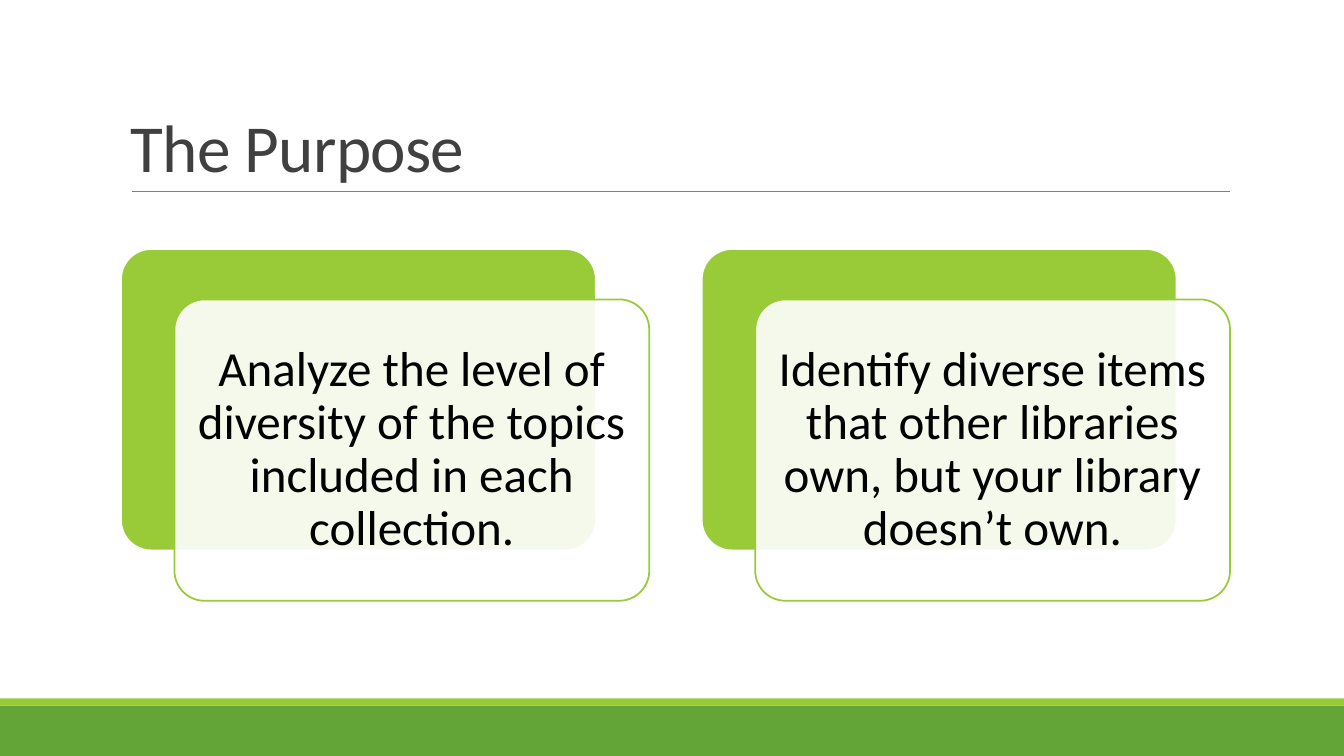
from lxml.etree import SubElement
from pptx import Presentation
from pptx.dml.color import RGBColor as RGB
from pptx.enum.shapes import MSO_CONNECTOR as Connector, MSO_SHAPE as Shape
from pptx.enum.text import MSO_ANCHOR as Anchor, PP_ALIGN as Align
from pptx.oxml.ns import qn
from pptx.util import Inches, Pt

SLIDE_W, SLIDE_H = 13.33, 7.5
LEFT, CONTENT_W = 1.2, 11
CARD_W, CARD_H = 4.71, 2.99
CARD_TOP, CARD_PITCH = 2.47, 5.76
OFFSET_X, OFFSET_Y = 0.53, 0.5
FONT = "Calibri"
COLORS = {
    "band": "63A537",
    "accent": "99CB38",
    "rule": "808080",
    "title": "404040",
    "body": "000000",
    "white": "FFFFFF",
}
PURPOSES = [
    "Analyze the level of diversity of the topics included in each collection.",
    "Identify diverse items that other libraries own, but your library doesn’t own.",
]


def color(name):
    return RGB.from_string(COLORS[name])


def add_block(slide, kind, box, fill, line=None):
    block = slide.shapes.add_shape(kind, *map(Inches, box))
    block.shadow.inherit = False
    block.fill.solid()
    block.fill.fore_color.rgb = color(fill)
    if line:
        block.line.color.rgb = color(line)
        block.line.width = Pt(1.25)
    else:
        block.line.fill.background()
    return block


def add_rounded(slide, left, top, fill, line):
    card = add_block(slide, Shape.ROUNDED_RECTANGLE,
                     (left, top, CARD_W, CARD_H), fill, line)
    card.adjustments[0] = 0.1
    return card


def set_text(frame, text, size, ink, anchor, spacing):
    frame.word_wrap = True
    frame.vertical_anchor = anchor
    frame.text = text
    paragraph = frame.paragraphs[0]
    paragraph.line_spacing = spacing
    font = paragraph.runs[0].font
    font.name, font.size = FONT, Pt(size)
    font.color.rgb = color(ink)
    return paragraph


def add_title(slide, text):
    title = slide.shapes.add_textbox(*map(Inches, (LEFT, 0.31, CONTENT_W, 1.59)))
    paragraph = set_text(title.text_frame, text, 48, "title", Anchor.BOTTOM, 0.85)
    # Slightly tightened letter spacing
    paragraph.runs[0].font._element.set("spc", "-50")


def add_rule(slide, left, right, y):
    rule = slide.shapes.add_connector(
        Connector.STRAIGHT, *map(Inches, (left, y, right, y)))
    rule.line.color.rgb = color("rule")
    rule.line.width = Pt(0.5)
    SubElement(rule._element.spPr, qn("a:effectLst"))


def add_purpose(slide, left, text):
    # Solid card behind, translucent card with the text in front
    add_rounded(slide, left, CARD_TOP, "accent", "white")
    front = add_rounded(slide, left + OFFSET_X, CARD_TOP + OFFSET_Y,
                        "white", "accent")
    white = front._element.spPr.find(qn("a:solidFill"))[0]
    SubElement(white, qn("a:alpha"), val="90000")
    frame = front.text_frame
    frame.margin_left = frame.margin_right = Inches(0.13)
    frame.margin_top = frame.margin_bottom = Inches(0.15)
    paragraph = set_text(frame, text, 35, "body", Anchor.MIDDLE, 0.9)
    paragraph.alignment = Align.CENTER


def main():
    deck = Presentation()
    deck.slide_width, deck.slide_height = Inches(SLIDE_W), Inches(SLIDE_H)
    slide = deck.slides.add_slide(deck.slide_layouts[6])

    # Footer bands
    add_block(slide, Shape.RECTANGLE, (0, 7, SLIDE_W, 0.5), "band")
    add_block(slide, Shape.RECTANGLE, (0, 6.93, SLIDE_W, 0.07), "accent")

    # Heading
    add_rule(slide, 1.31, 12.2, 1.9)
    add_title(slide, "The Purpose")

    # Purposes, side by side
    for column, purpose in enumerate(PURPOSES):
        add_purpose(slide, LEFT + column * CARD_PITCH, purpose)

    deck.save("out.pptx")


if __name__ == "__main__":
    main()
